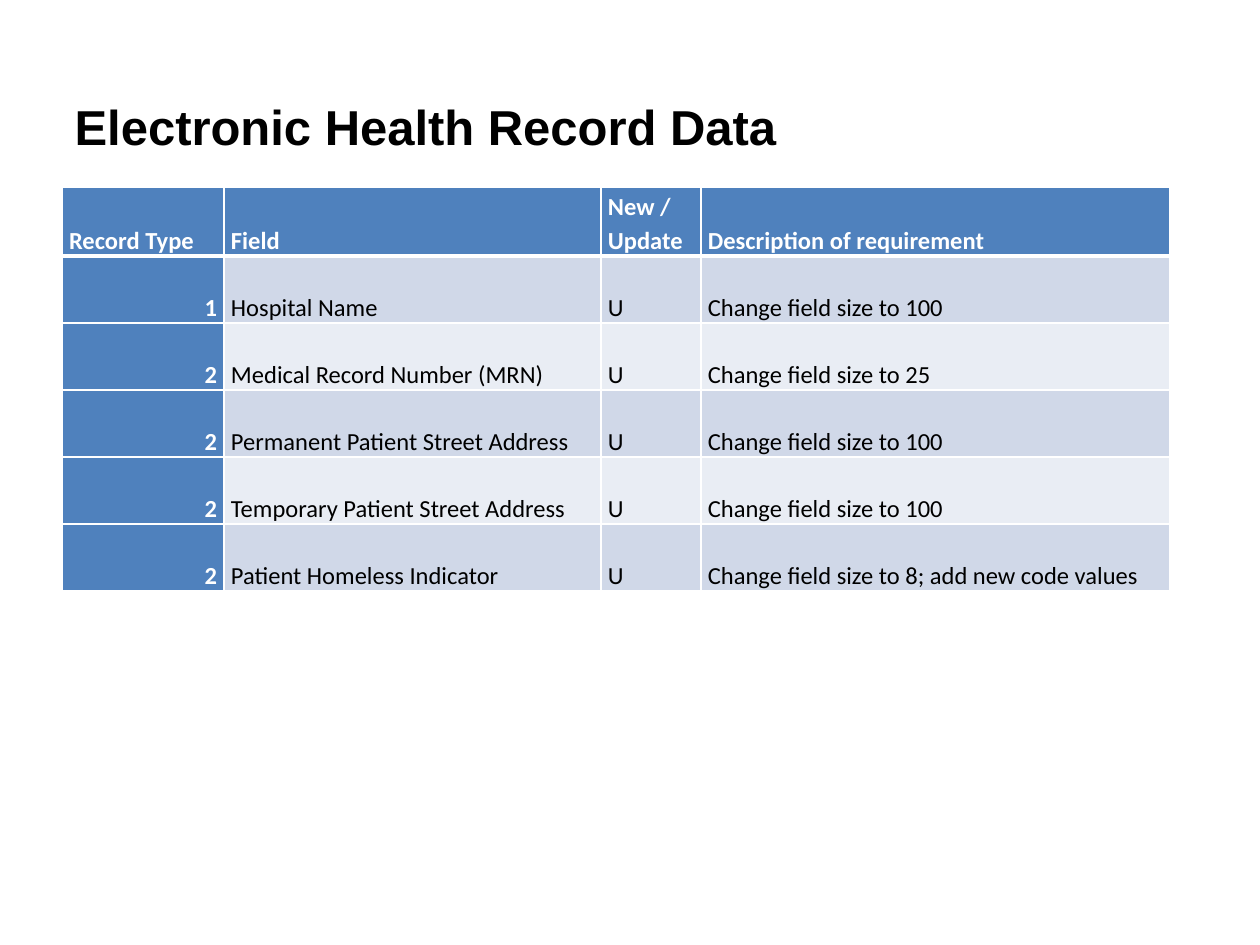
from lxml import etree
from pptx import Presentation
from pptx.dml.color import RGBColor
from pptx.enum.text import MSO_ANCHOR, PP_ALIGN
from pptx.oxml.ns import qn
from pptx.util import Pt

PX = 914400 // 126
LEFT, RIGHT = PP_ALIGN.LEFT, PP_ALIGN.RIGHT
MIDDLE, BOTTOM = MSO_ANCHOR.MIDDLE, MSO_ANCHOR.BOTTOM
TITLE_ONLY = 5
COLORS = {
    "ink": "000000",
    "paper": "FFFFFF",
    "accent": "4F81BD",
    "odd": "D0D8E8",
    "even": "E9EDF4",
}
HEADINGS = ("Record Type", "Field", "New / Update", "Description of requirement")
REQUIREMENTS = (
    ("1", "Hospital Name", "U", "Change field size to 100"),
    ("2", "Medical Record Number (MRN)", "U", "Change field size to 25"),
    ("2", "Permanent Patient Street Address", "U", "Change field size to 100"),
    ("2", "Temporary Patient Street Address", "U", "Change field size to 100"),
    ("2", "Patient Homeless Indicator", "U", "Change field size to 8; add new code values"),
)
COLUMN_WIDTHS = (162, 377, 100, 469)
ROW_HEIGHTS = (69,) + (67,) * len(REQUIREMENTS)


class Deck:
    title_font = "Arial"
    body_font = "Calibri"

    def __init__(self, width, height):
        self.presentation = Presentation()
        self.presentation.slide_width = width * PX
        self.presentation.slide_height = height * PX
        self.slide = None

    def new_slide(self):
        layout = self.presentation.slide_layouts[TITLE_ONLY]
        self.slide = self.presentation.slides.add_slide(layout)

    def style(self, paragraph, font_name, size, color, bold, align):
        paragraph.alignment = align
        for run in paragraph.runs:
            run.font.name = font_name
            run.font.size = Pt(size)
            run.font.bold = bold
            run.font.color.rgb = RGBColor.from_string(COLORS[color])

    def title(self, text, left, top, width, height):
        heading = self.slide.shapes.title
        heading.left, heading.top = left * PX, top * PX
        heading.width, heading.height = width * PX, height * PX
        frame = heading.text_frame
        frame.text = text
        frame.vertical_anchor = MIDDLE
        self.style(frame.paragraphs[0], self.title_font, 28, "ink", True, LEFT)

    def border(self, cell, side, points):
        properties = cell._tc.get_or_add_tcPr()
        line = etree.SubElement(properties, qn(f"a:ln{side}"), w=str(Pt(points)))
        fill = etree.SubElement(line, qn("a:solidFill"))
        etree.SubElement(fill, qn("a:srgbClr"), val=COLORS["paper"])

    def cell(self, cell, text, row, column):
        accented = row == 0 or column == 0
        cell.text = text
        cell.margin_left = cell.margin_right = 7 * PX
        cell.margin_top = cell.margin_bottom = 0
        cell.vertical_anchor = BOTTOM
        paragraph = cell.text_frame.paragraphs[0]
        paragraph.line_spacing = 1.15
        align = RIGHT if row and column == 0 else LEFT
        color = "paper" if accented else "ink"
        self.style(paragraph, self.body_font, 14, color, accented, align)
        widths = {"L": 1, "R": 1, "T": 3 if row == 1 else 1, "B": 3 if row == 0 else 1}
        for side, points in widths.items():
            self.border(cell, side, points)
        band = "odd" if row % 2 else "even"
        cell.fill.solid()
        cell.fill.fore_color.rgb = RGBColor.from_string(COLORS["accent" if accented else band])

    def table(self, rows, left, top, widths, heights):
        grid = self.slide.shapes.add_table(
            len(rows), len(widths), left * PX, top * PX, sum(widths) * PX, sum(heights) * PX
        ).table
        for column, width in zip(grid.columns, widths):
            column.width = width * PX
        for row, height in zip(grid.rows, heights):
            row.height = height * PX
        for r, texts in enumerate(rows):
            for c, text in enumerate(texts):
                self.cell(grid.cell(r, c), text, r, c)


def main():
    deck = Deck(1260, 945)
    deck.new_slide()
    deck.title("Electronic Health Record Data", 62, 53, 1108, 145)
    deck.table((HEADINGS,) + REQUIREMENTS, 62, 187, COLUMN_WIDTHS, ROW_HEIGHTS)
    deck.presentation.save("out.pptx")


if __name__ == "__main__":
    main()
